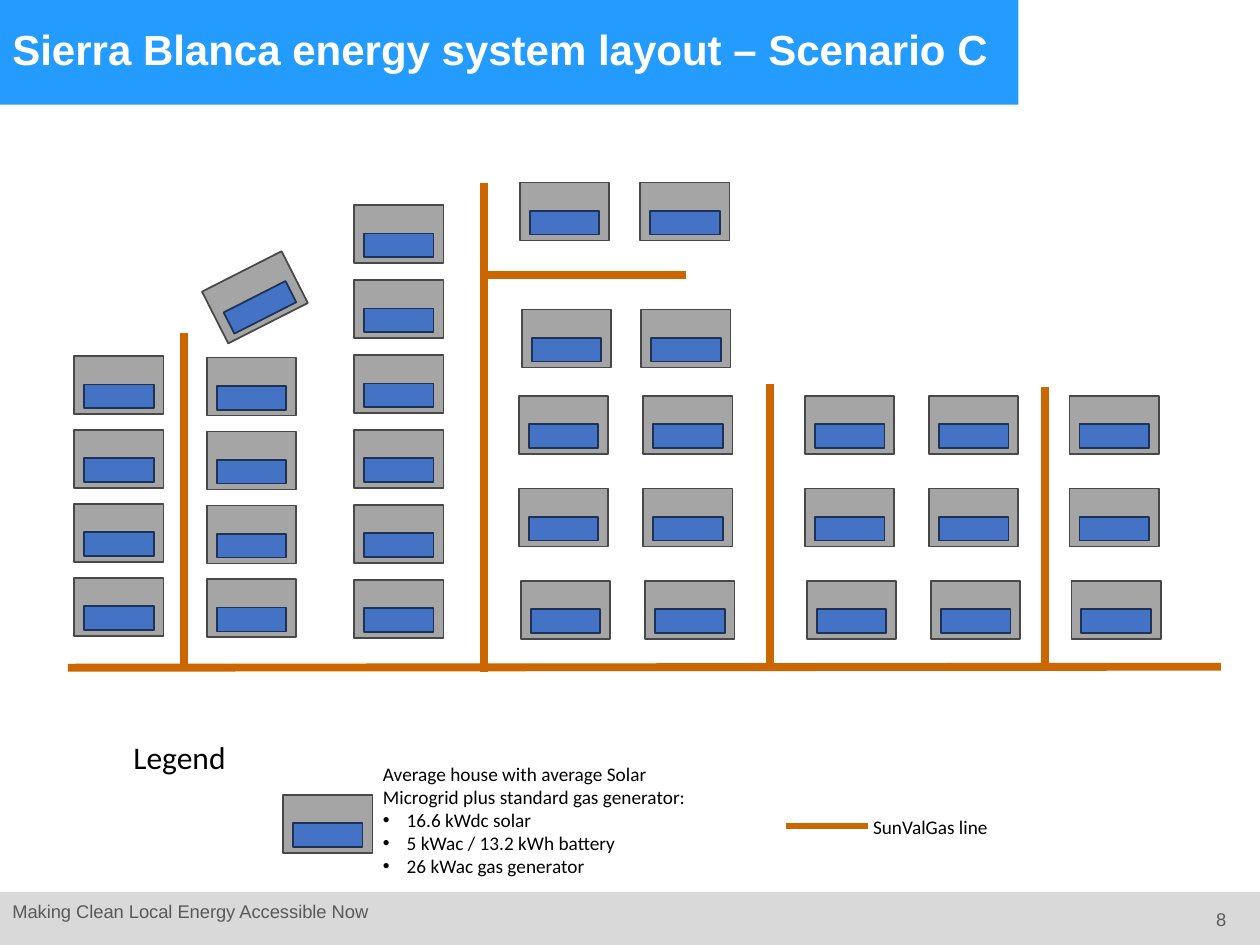
from lxml import etree
from pptx import Presentation
from pptx.dml.color import RGBColor
from pptx.enum.shapes import MSO_CONNECTOR, MSO_SHAPE
from pptx.enum.text import MSO_ANCHOR, PP_ALIGN
from pptx.oxml.ns import qn
from pptx.util import Cm, Pt

STRAIGHT = MSO_CONNECTOR.STRAIGHT
RECTANGLE = MSO_SHAPE.RECTANGLE
TOP, MIDDLE = MSO_ANCHOR.TOP, MSO_ANCHOR.MIDDLE
LEFT, RIGHT = PP_ALIGN.LEFT, PP_ALIGN.RIGHT

GAS_COLOR = "CC6600"
TITLE = {"name": "Arial", "size": Pt(24), "bold": True}
FOOTER = {"name": "Arial", "size": Pt(10.5)}
HEADING = {"name": "Calibri", "size": Pt(18)}
LABEL = {"name": "Calibri", "size": Pt(11)}

# All positions are in centimetres.
GAS_LINES = [
    (1.37, 13.46, 24.61, 13.44),
    (15.52, 13.46, 15.52, 7.75),
    (3.71, 13.49, 3.71, 6.71),
    (9.75, 13.54, 9.75, 3.68),
    (13.82, 5.54, 9.8, 5.54),
    (21.06, 13.51, 21.06, 7.8),
]
# left, top, number of houses, distance between tops
WEST_COLUMNS = [
    (1.5, 7.18, 4, 1.49),
    (4.17, 7.21, 4, 1.49),
    (7.14, 4.14, 6, 1.51),
]
EAST_LEFTS = [10.46, 12.97, 16.23, 18.73, 21.56]
NORTH_HOUSES = [(10.48, 3.68), (12.91, 3.68), (10.52, 6.24), (12.93, 6.24)]


def color(hex_string):
    return RGBColor.from_string(hex_string)


def add_rectangle(shapes, left, top, width, height, fill, outline=None):
    shape = shapes.add_shape(RECTANGLE, Cm(left), Cm(top), Cm(width), Cm(height))
    shape.shadow.inherit = False
    shape.fill.solid()
    shape.fill.fore_color.rgb = color(fill)
    if outline:
        shape.line.color.rgb = color(outline)
        shape.line.width = Pt(1)
    else:
        shape.line.fill.background()


def add_house(slide, left, top, rotation=0):
    """Add a house with its solar microgrid as one group."""
    house = slide.shapes.add_group_shape()
    add_rectangle(house.shapes, left, top, 1.8, 1.17, "A5A5A5", "484848")
    add_rectangle(house.shapes, left + 0.2, top + 0.57, 1.4, 0.48, "4472C4", "1E3256")
    house.rotation = rotation


def add_house_column(slide, left, top, count, pitch):
    for row in range(count):
        add_house(slide, left, top + row * pitch)


def add_gas_line(slide, start_x, start_y, end_x, end_y, width=4.5):
    connector = slide.shapes.add_connector(
        STRAIGHT, Cm(start_x), Cm(start_y), Cm(end_x), Cm(end_y))
    connector.line.color.rgb = color(GAS_COLOR)
    connector.line.width = Pt(width)
    etree.SubElement(connector._element.spPr, qn("a:effectLst"))


def add_bullet(paragraph):
    properties = paragraph._p.get_or_add_pPr()
    properties.set("marL", str(Cm(0.48)))
    properties.set("indent", str(-Cm(0.48)))
    etree.SubElement(properties, qn("a:buFont"), typeface="Arial")
    etree.SubElement(properties, qn("a:buChar"), char="•")


def add_text(slide, left, top, width, height, lines, font, font_color="000000",
             anchor=TOP, alignment=LEFT, line_spacing=None):
    """Add a text box in which every line after the first is a bullet."""
    box = slide.shapes.add_textbox(Cm(left), Cm(top), Cm(width), Cm(height))
    frame = box.text_frame
    frame.word_wrap = True
    frame.vertical_anchor = anchor
    for index, line in enumerate(lines):
        paragraph = frame.add_paragraph() if index else frame.paragraphs[0]
        paragraph.alignment = alignment
        if line_spacing:
            paragraph.line_spacing = line_spacing
        if index:
            add_bullet(paragraph)
        run = paragraph.add_run()
        run.text = line
        for name, value in font.items():
            setattr(run.font, name, value)
        run.font.color.rgb = color(font_color)


def add_frame(slide):
    """Add the title band and the footer band."""
    add_rectangle(slide.shapes, 0, 17.98, 25.4, 1.07, "D9D9D9")
    add_text(slide, 0, 18.03, 13.13, 0.71,
             ["Making Clean Local Energy Accessible Now"], FOOTER, "595959")
    add_rectangle(slide.shapes, 0, 0, 20.53, 2.11, "249CFF")
    add_text(slide, 23.37, 18.19, 1.6, 1.02, ["8"], FOOTER, "595959",
             alignment=RIGHT)
    add_text(slide, 0, 0, 20.32, 2.11,
             ["Sierra Blanca energy system layout – Scenario C"], TITLE, "FFFFFF",
             anchor=MIDDLE, line_spacing=0.9)


def add_neighborhood(slide):
    for gas_line in GAS_LINES:
        add_gas_line(slide, *gas_line)
    for column in WEST_COLUMNS:
        add_house_column(slide, *column)
    add_house(slide, 4.24, 5.41, rotation=333.1)
    for left, top in NORTH_HOUSES:
        add_house(slide, left, top)
    for left in EAST_LEFTS:
        add_house_column(slide, left, 7.98, 2, 1.87)
        add_house(slide, left + 0.04, 11.71)


def add_legend(slide):
    add_text(slide, 2.44, 14.76, 2.62, 1.02, ["Legend"], HEADING)
    add_house(slide, 5.71, 16.02)
    add_text(slide, 7.47, 15.24, 6.71, 2.62, [
        "Average house with average Solar Microgrid plus standard gas generator:",
        "16.6 kWdc solar",
        "5 kWac / 13.2 kWh battery",
        "26 kWac gas generator",
    ], LABEL)
    add_gas_line(slide, 17.5, 16.66, 15.85, 16.66, width=3.5)
    add_text(slide, 17.35, 16.31, 4.39, 0.74, ["SunValGas line"], LABEL)


def main():
    presentation = Presentation()
    presentation.slide_width = Cm(25.4)
    presentation.slide_height = Cm(19.05)
    slide = presentation.slides.add_slide(presentation.slide_layouts[6])
    add_frame(slide)
    add_neighborhood(slide)
    add_legend(slide)
    presentation.save("out.pptx")


if __name__ == "__main__":
    main()
